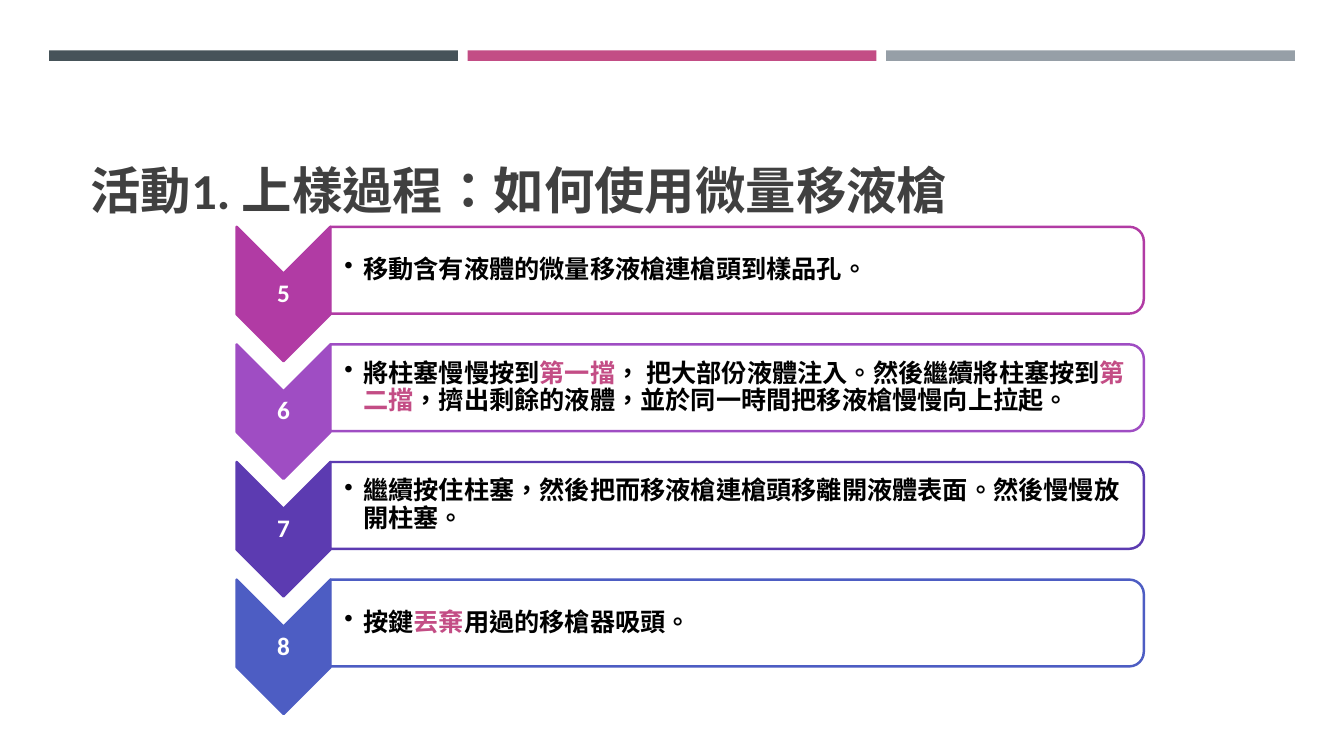
from dataclasses import dataclass

from lxml import etree
from pptx import Presentation
from pptx.dml.color import RGBColor
from pptx.enum import lang, shapes, text
from pptx.oxml import ns
from pptx.util import Pt


@dataclass(frozen=True)
class Theme:
    bars: tuple = ("465359", "C34D85", "969FA7")
    steps: tuple = ("B13BA4", "9F4DC3", "5C3BB1", "4D5DC3")
    title: str = "404040"
    ink: str = "000000"
    paper: str = "FFFFFF"
    accent: str = "C34D85"
    font: str = "Calibri"
    alt_font: str = "Arial"
    title_size: int = 36
    body_size: int = 18
    outline: float = 1.75


THEME = Theme()
TITLE = "活動1. 上樣過程：如何使用微量移液槍"

# Run styles: plain, highlighted, alternate font
PLAIN = {}
MARK = {"color": THEME.accent}
ALT = {"name": THEME.alt_font}

STEPS = [
    ("5", [("移動含有液體的", PLAIN), ("微量移液槍連槍頭到樣品孔。", ALT)]),
    ("6", [("將柱塞慢慢按到", PLAIN), ("第一擋", MARK),
           ("， 把大部份液體注入。然後繼續將柱塞按到", PLAIN), ("第二擋", MARK),
           ("，擠出剩餘的液體，並於同一時間把", PLAIN), ("移液槍", ALT),
           ("慢慢向上拉起。", PLAIN)]),
    ("7", [("繼續按住柱塞，然後把而", PLAIN), ("移液槍連槍頭", ALT),
           ("移離開液體表面。然後慢慢放開柱塞。", PLAIN)]),
    ("8", [("按鍵", PLAIN), ("丟棄", MARK), ("用過的移", PLAIN),
           ("槍", ALT), ("器吸頭。", PLAIN)]),
]


def set_all(obj, values):
    for name, value in values.items():
        setattr(obj, name, value)


def add_run(p, words, color, size=THEME.body_size, name=THEME.font):
    r = p.add_run()
    r.text = words
    set_all(r.font, {"name": name, "size": Pt(size), "bold": True,
                     "language_id": lang.MSO_LANGUAGE_ID.TRADITIONAL_CHINESE})
    r.font.color.rgb = RGBColor.from_string(color)


def add_block(s, kind, box, fill, line=None, turned=False):
    """Add a filled shape that covers box, also when turned a quarter."""
    x, y, w, h = box
    if turned:
        x, y, w, h = x + (w - h) / 2, y + (h - w) / 2, h, w
    sp = s.shapes.add_shape(kind, Pt(x), Pt(y), Pt(w), Pt(h))
    sp.rotation = 90 if turned else 0
    sp.shadow.inherit = False
    sp.fill.solid()
    sp.fill.fore_color.rgb = RGBColor.from_string(fill)
    if line:
        sp.line.color.rgb = RGBColor.from_string(line)
        sp.line.width = Pt(THEME.outline)
    else:
        sp.line.fill.background()
    return sp


def add_text(s, box, left_inset=1):
    """Add a vertically centred text box and return its paragraph."""
    tf = s.shapes.add_textbox(*map(Pt, box)).text_frame
    set_all(tf, {"word_wrap": True, "vertical_anchor": text.MSO_ANCHOR.MIDDLE,
                 "margin_left": Pt(left_inset), "margin_top": Pt(1),
                 "margin_right": Pt(1), "margin_bottom": Pt(1)})
    p = tf.paragraphs[0]
    p.line_spacing = 0.9
    return p


def add_bullet(p, indent):
    pPr = p._p.get_or_add_pPr()
    pPr.set("marL", str(Pt(indent)))
    pPr.set("indent", str(-Pt(indent)))
    etree.SubElement(pPr, ns.qn("a:buChar")).set("char", "•")


def draw_bars(s, box):
    x, y, w, h = box
    gap = 7
    bar_w = (w - 2 * gap) / 3
    for i, color in enumerate(THEME.bars):
        add_block(s, shapes.MSO_SHAPE.RECTANGLE,
                  (x + i * (bar_w + gap), y, bar_w, h), color)


def draw_title(s, box):
    sp = s.shapes.title
    set_all(sp, dict(zip(("left", "top", "width", "height"), map(Pt, box))))
    tf = sp.text_frame
    set_all(tf, {"vertical_anchor": text.MSO_ANCHOR.BOTTOM, "word_wrap": True,
                 "auto_size": text.MSO_AUTO_SIZE.NONE})
    p = tf.paragraphs[0]
    p.alignment = text.PP_ALIGN.LEFT
    add_run(p, TITLE, THEME.title, THEME.title_size)


def draw_step(s, box, number, runs, color):
    x, y, w, h = box
    arrow_w = 67
    panel_x, panel_w, panel_h = x + arrow_w, w - arrow_w, 62

    # Arrow and its number, between notch and shoulders
    add_block(s, shapes.MSO_SHAPE.CHEVRON, (x, y, arrow_w, h), color, color,
              turned=True)
    p = add_text(s, (x, y + arrow_w / 2, arrow_w, h - arrow_w))
    p.alignment = text.PP_ALIGN.CENTER
    add_run(p, number, THEME.paper)

    # Panel and its instruction
    panel = add_block(s, shapes.MSO_SHAPE.ROUND_2_SAME_RECTANGLE,
                      (panel_x, y, panel_w, panel_h), THEME.paper, color,
                      turned=True)
    rgb = panel._element.spPr.find(ns.qn("a:solidFill"))[0]
    etree.SubElement(rgb, ns.qn("a:alpha")).set("val", "90000")
    p = add_text(s, (panel_x, y + 3, panel_w - 3, panel_h - 6), left_inset=10)
    add_bullet(p, 13.5)
    for words, style in runs:
        add_run(p, words, **{"color": THEME.ink, **style})


def draw_steps(s, box):
    x, y, w, h = box
    step_h = 96
    pitch = (h - step_h) / (len(STEPS) - 1)
    for i, ((number, runs), color) in enumerate(zip(STEPS, THEME.steps)):
        draw_step(s, (x, y + i * pitch, w, step_h), number, runs, color)


def main():
    prs = Presentation()
    prs.slide_width, prs.slide_height = Pt(960), Pt(540)
    s = prs.slides.add_slide(prs.slide_layouts[5])
    draw_bars(s, (35, 36, 890, 7.5))
    draw_steps(s, (169, 162, 648, 348))
    draw_title(s, (57.5, 67, 868, 93.5))
    prs.save("out.pptx")


if __name__ == "__main__":
    main()
